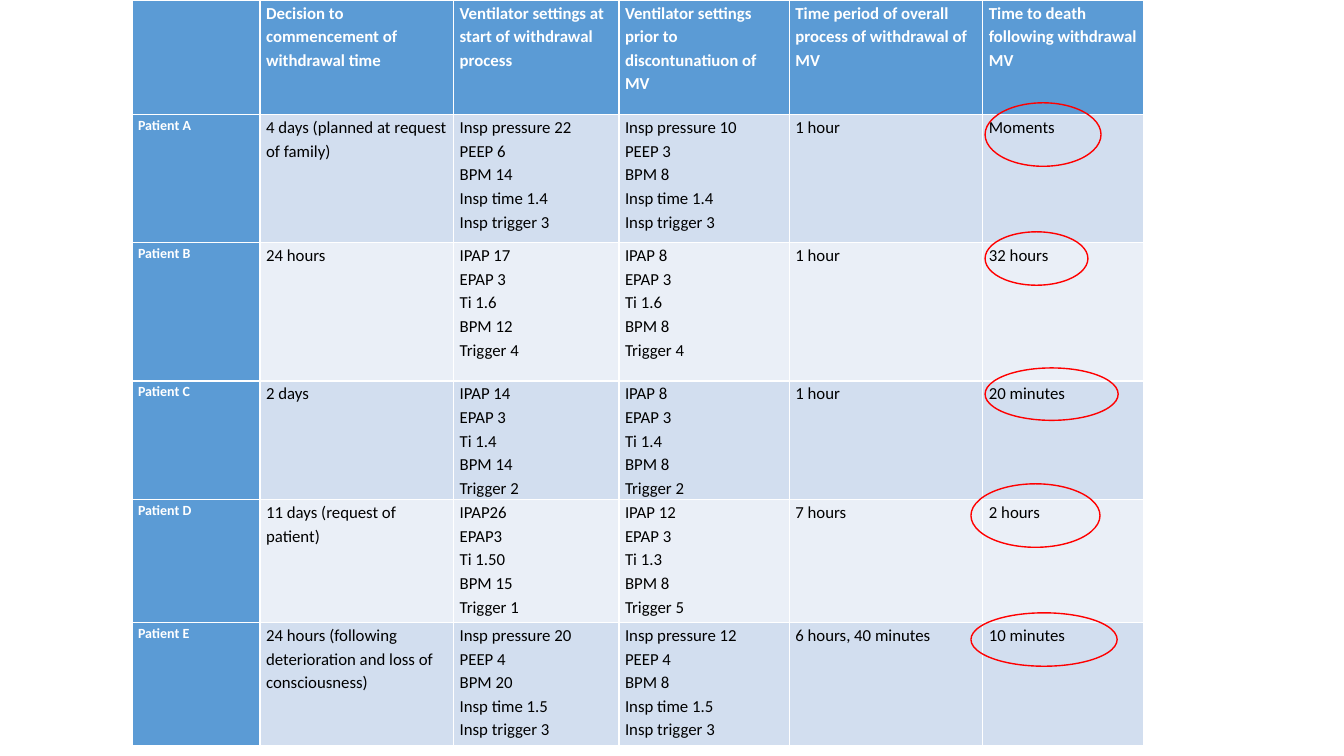
from pptx import Presentation, util as u
from pptx.dml.color import RGBColor
from pptx.enum import shapes


def color(value):
    """Turn a hex string into a colour."""
    return RGBColor.from_string(value)


class SlideBuilder:
    """Hold the style and the current slide."""

    FONT = "Calibri"
    HEADING, BANDS = "5B9BD5", ("D2DEEF", "EAEFF7")
    WHITE, BLACK, RING = "FFFFFF", "000000", "FF0000"

    def __init__(self, slide):
        """Keep the slide to draw on."""
        self.slide = slide

    def cell(self, cell, wording, fill, size, ink, bold):
        """Fill one table cell and style its text."""
        cell.fill.solid()
        cell.fill.fore_color.rgb = color(fill)
        cell.margin_left = cell.margin_right = u.Inches(0.06)
        cell.margin_top = cell.margin_bottom = 0
        paragraph = cell.text_frame.paragraphs[0]
        paragraph.text = wording
        paragraph.line_spacing = 1.15
        font = paragraph.font
        font.name, font.size, font.bold = self.FONT, u.Pt(size), bold
        font.color.rgb = color(ink)

    def table(self, left, top, widths, heights, rows):
        """Add a banded table with a heading row and column."""
        table = self.slide.shapes.add_table(
            len(heights), len(widths), u.Inches(left), u.Inches(top),
            u.Inches(sum(widths)), u.Inches(sum(heights))).table
        table.first_col = True
        for column, width in zip(table.columns, widths):
            column.width = u.Inches(width)
        for row, height in zip(table.rows, heights):
            row.height = u.Inches(height)
        for r, row in enumerate(rows):
            for c, wording in enumerate(row):
                heading = r == 0 or c == 0
                self.cell(table.cell(r, c), wording,
                          self.HEADING if heading else self.BANDS[(r - 1) % 2],
                          10 if r and c == 0 else 12,
                          self.WHITE if heading else self.BLACK, heading)

    def ring(self, left, top, width, height):
        """Add an unfilled ellipse around a value."""
        ring = self.slide.shapes.add_shape(
            shapes.MSO_SHAPE.OVAL, *map(u.Inches, (left, top, width, height)))
        ring.shadow.inherit = False
        ring.fill.background()
        ring.line.color.rgb = color(self.RING)
        ring.line.width = u.Pt(1)


COLUMN_WIDTHS = (1.27, 1.92, 1.64, 1.69, 1.92, 1.59)
ROW_HEIGHTS = (1.14, 1.27, 1.37, 1.18, 1.22, 1.22)

PATIENTS = (
    ("", "Decision to commencement of withdrawal time",
     "Ventilator settings at start of withdrawal process",
     "Ventilator settings prior to  discontunatiuon of MV",
     "Time period of overall process of withdrawal of MV",
     "Time to death following withdrawal MV"),
    ("Patient A", "4 days (planned at request of family)",
     "Insp pressure 22\nPEEP 6\nBPM 14\nInsp time 1.4\nInsp trigger 3",
     "Insp pressure 10\nPEEP 3\nBPM 8\nInsp time 1.4\nInsp trigger 3",
     "1 hour", "Moments"),
    ("Patient B", "24 hours",
     "IPAP 17\nEPAP 3\nTi 1.6\nBPM 12\nTrigger 4",
     "IPAP 8\nEPAP 3\nTi 1.6\nBPM 8\nTrigger 4",
     "1 hour", "32 hours"),
    ("Patient C", "2 days",
     "IPAP 14\nEPAP 3\nTi 1.4\nBPM 14\nTrigger 2",
     "IPAP 8\nEPAP 3\nTi 1.4\nBPM 8\nTrigger 2",
     "1 hour", "20 minutes"),
    ("Patient D", "11 days (request of patient)",
     "IPAP26\nEPAP3\nTi 1.50\nBPM 15\nTrigger 1",
     "IPAP 12\nEPAP 3\nTi 1.3\nBPM 8\nTrigger 5",
     "7 hours", "2 hours"),
    ("Patient E", "24 hours (following deterioration and loss of consciousness)",
     "Insp pressure 20\nPEEP 4\nBPM 20\nInsp time 1.5\nInsp trigger 3",
     "Insp pressure 12\nPEEP 4\nBPM 8\nInsp time 1.5\nInsp trigger 3",
     "6 hours, 40 minutes", "10 minutes"),
)

DEATH_TIME_RINGS = (
    (9.77, 1.02, 1.15, 0.63),
    (9.77, 2.3, 1.02, 0.53),
    (9.77, 3.65, 1.32, 0.52),
    (9.63, 4.8, 1.28, 0.63),
    (9.63, 6.08, 1.45, 0.53),
)


def main():
    """Build the slide and save it."""
    deck = Presentation()
    deck.slide_width, deck.slide_height = u.Inches(13.33), u.Inches(7.5)
    builder = SlideBuilder(deck.slides.add_slide(deck.slide_layouts[6]))
    builder.table(1.31, 0, COLUMN_WIDTHS, ROW_HEIGHTS, PATIENTS)
    for bounds in DEATH_TIME_RINGS:
        builder.ring(*bounds)
    deck.save("out.pptx")


if __name__ == "__main__":
    main()
